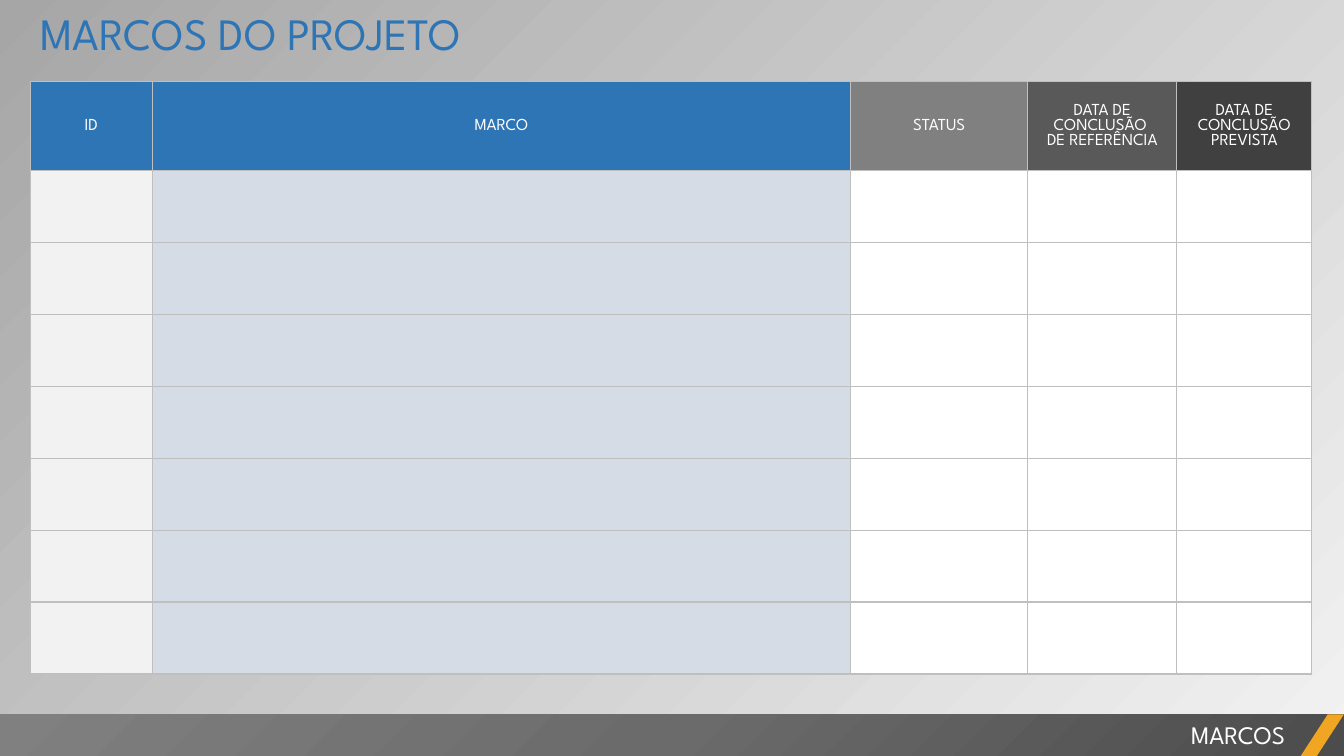
from copy import deepcopy
from dataclasses import dataclass

from lxml.etree import SubElement
from pptx import Presentation
from pptx.dml.color import RGBColor
from pptx.enum.shapes import MSO_SHAPE
from pptx.enum.text import MSO_ANCHOR, MSO_AUTO_SIZE, PP_ALIGN
from pptx.oxml import parse_xml
from pptx.oxml.ns import nsdecls, qn
from pptx.util import Pt


@dataclass(frozen=True)
class Theme:
    font: str = "League Spartan"
    title_size: int = 32
    footer_size: int = 18
    header_size: int = 12
    blue: str = "2E75B6"
    pale_blue: str = "D6DCE5"
    white: str = "FFFFFF"
    pale_gray: str = "F2F2F2"
    border_gray: str = "BFBFBF"
    background_gray: str = "A6A6A6"
    status_gray: str = "808080"
    baseline_gray: str = "595959"
    forecast_gray: str = "404040"
    footer_dark: str = "4C4C4C"
    footer_middle: str = "6B6B6B"
    orange: str = "F0A622"


theme = Theme()


def write_text(text_frame, text, size, color, alignment, frame_format):
    for name, value in frame_format.items():
        setattr(text_frame, name, value)
    text_frame.text = text
    paragraph = text_frame.paragraphs[0]
    paragraph.alignment = alignment
    for run in paragraph.runs:
        for name, value in {"name": theme.font, "size": Pt(size), "bold": False}.items():
            setattr(run.font, name, value)
        run.font.color.rgb = RGBColor.from_string(color)


def set_gradient(fill, first_color, last_color):
    fill.gradient()
    for stop, color, position in zip(fill.gradient_stops, (first_color, last_color), (0, 1)):
        stop.color.rgb = RGBColor.from_string(color)
        stop.position = position


presentation = Presentation()
presentation.slide_width, presentation.slide_height = Pt(960), Pt(540)
slide = presentation.slides.add_slide(presentation.slide_layouts[5])
grow_format = {"word_wrap": True, "auto_size": MSO_AUTO_SIZE.SHAPE_TO_FIT_TEXT,
               "vertical_anchor": MSO_ANCHOR.TOP}

# Background
background_fill = slide.background.fill
set_gradient(background_fill, theme.pale_gray, theme.background_gray)
background_fill.gradient_angle = 135
light_stop = next(slide.background._cSld.iter(qn("a:srgbClr")))
SubElement(light_stop, qn("a:alpha"), val="40000")

# Title
title = slide.shapes.title
for name, value in {"left": 21.6, "top": 0.7, "width": 921, "height": 46}.items():
    setattr(title, name, Pt(value))
write_text(title.text_frame, "MARCOS DO PROJETO", theme.title_size, theme.blue,
           PP_ALIGN.LEFT, grow_format)

# Milestone table: header, width, header fill, body fill
columns = [
    ("ID", 87.1, theme.blue, theme.pale_gray),
    ("MARCO", 499, theme.blue, theme.pale_blue),
    ("STATUS", 126.5, theme.status_gray, theme.white),
    ("DATA DE CONCLUSÃO \vDE REFERÊNCIA", 106.5, theme.baseline_gray, theme.white),
    ("DATA DE CONCLUSÃO PREVISTA", 96.4, theme.forecast_gray, theme.white),
]
body_rows, header_height, body_height = 7, 63.4, 51.4
table_width = sum(column[1] for column in columns)
table_height = header_height + body_rows * body_height
table = slide.shapes.add_table(body_rows + 1, len(columns), Pt(21.6), Pt(58.3),
                               Pt(table_width), Pt(table_height)).table
table.first_row = table.horz_banding = False
for row_index, row in enumerate(table.rows):
    row.height = Pt(body_height if row_index else header_height)

header_format = {"margin_left": Pt(0.7), "margin_right": Pt(0.7), "margin_top": Pt(0.7),
                 "margin_bottom": 0, "vertical_anchor": MSO_ANCHOR.MIDDLE}
for column_index, (header, width, header_fill, body_fill) in enumerate(columns):
    table.columns[column_index].width = Pt(width)
    for row_index in range(body_rows + 1):
        cell = table.cell(row_index, column_index)
        cell.fill.solid()
        cell.fill.fore_color.rgb = RGBColor.from_string(body_fill if row_index else header_fill)
        cell_properties = cell._tc.get_or_add_tcPr()
        for position, side in enumerate(("lnL", "lnR", "lnT", "lnB")):
            cell_properties.insert(position, parse_xml(
                f'<a:{side} {nsdecls("a")} w="{Pt(1)}"><a:solidFill>'
                f'<a:srgbClr val="{theme.border_gray}"/></a:solidFill></a:{side}>'))
    header_cell = table.cell(0, column_index)
    for name, value in header_format.items():
        setattr(header_cell, name, value)
    write_text(header_cell.text_frame, header, theme.header_size, theme.white,
               PP_ALIGN.CENTER, {})

# Footer band with a radial gradient from its lower right corner
footer_band = slide.shapes.add_shape(MSO_SHAPE.RECTANGLE, 0, Pt(510.2), Pt(960), Pt(30))
set_gradient(footer_band.fill, theme.footer_dark, theme.status_gray)
gradient = footer_band._element.spPr.find(qn("a:gradFill"))
first_stop = gradient.find(qn("a:gsLst"))[0]
first_stop.addnext(deepcopy(first_stop))
middle_stop = footer_band.fill.gradient_stops[1]
middle_stop.position = 0.5
middle_stop.color.rgb = RGBColor.from_string(theme.footer_middle)
gradient.replace(gradient.find(qn("a:lin")), parse_xml(
    f'<a:path {nsdecls("a")} path="circle"><a:fillToRect l="100000" t="100000"/></a:path>'))

# Footer accent
accent = slide.shapes.add_shape(MSO_SHAPE.PARALLELOGRAM, Pt(929), Pt(510.2), Pt(31), Pt(30))
accent.adjustments[0] = 0.65
accent.fill.solid()
accent.fill.fore_color.rgb = RGBColor.from_string(theme.orange)
for shape in (footer_band, accent):
    shape.line.fill.background()
    shape.shadow.inherit = False

# Footer label
footer_label = slide.shapes.add_textbox(Pt(378), Pt(510), Pt(547), Pt(29))
write_text(footer_label.text_frame, "MARCOS", theme.footer_size, theme.white,
           PP_ALIGN.RIGHT, grow_format)

presentation.save("out.pptx")
